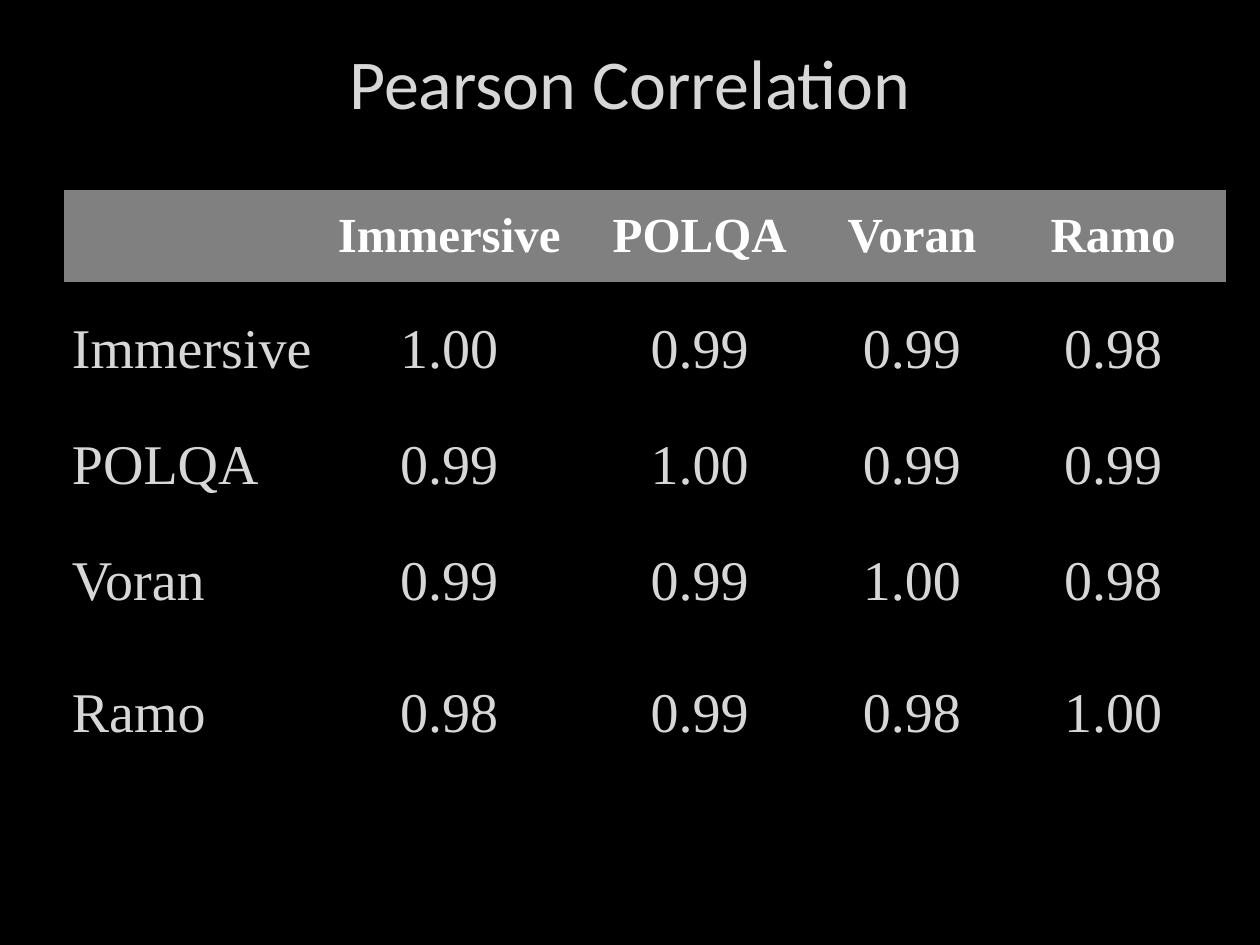
import pptx
import pptx.util
import pptx.dml.color
import pptx.enum.text
import lxml.etree

Cm = pptx.util.Cm
Pt = pptx.util.Pt
Rgb = pptx.dml.color.RGBColor.from_string
Align = pptx.enum.text.PP_ALIGN
Middle = pptx.enum.text.MSO_ANCHOR.MIDDLE

theme = {
    "back": "000000",
    "band": "808080",
    "rule": "000000",
    "title": {"name": "Calibri", "size": Pt(40), "bold": False, "color": "D7D7D7"},
    "head": {"name": "Times New Roman", "size": Pt(28), "bold": True, "color": "FFFFFF"},
    "body": {"name": "Times New Roman", "size": Pt(32), "bold": False, "color": "D7D7D7"},
    "thick": Pt(1.5),
    "thin": Pt(1),
}


def write(frame, text, style, align):
    para = frame.paragraphs[0]
    para.alignment = align
    run = para.add_run()
    run.text = text
    for key, value in style.items():
        if key == "color":
            run.font.color.rgb = Rgb(value)
        else:
            setattr(run.font, key, value)


def edge(cell, side, width):
    props = cell._tc.get_or_add_tcPr()
    space = "{" + props.nsmap["a"] + "}"
    line = lxml.etree.SubElement(props, space + "ln" + side, w=str(width))
    fill = lxml.etree.SubElement(line, space + "solidFill")
    lxml.etree.SubElement(fill, space + "srgbClr", val=theme["rule"])


deck = pptx.Presentation()
deck.slide_width = Cm(25.4)
deck.slide_height = Cm(19.05)
slide = deck.slides.add_slide(deck.slide_layouts[5])
slide.background.fill.solid()
slide.background.fill.fore_color.rgb = Rgb(theme["back"])

title = slide.shapes.title
place = {"left": Cm(1.27), "top": Cm(0.76), "width": Cm(22.86), "height": Cm(1.78)}
for key, value in place.items():
    setattr(title, key, value)
title.text_frame.vertical_anchor = Middle
write(title.text_frame, "Pearson Correlation", theme["title"], Align.CENTER)

names = ["Immersive", "POLQA", "Voran", "Ramo"]
scores = [
    ["1.00", "0.99", "0.99", "0.98"],
    ["0.99", "1.00", "0.99", "0.99"],
    ["0.99", "0.99", "1.00", "0.98"],
    ["0.98", "0.99", "0.98", "1.00"],
]
grid = [[""] + names] + [[name] + row for name, row in zip(names, scores)]
widths = [5.26, 5.05, 5.05, 3.51, 4.6]
heights = [1.9, 2.67, 2.01, 2.67, 2.67]
last = len(names)

frame = slide.shapes.add_table(
    len(heights), len(widths), Cm(1.27), Cm(3.81), Cm(sum(widths)), Cm(sum(heights))
)
table = frame.table
table.horz_banding = False
table._tbl.tblPr[0].text = "{2D5ABB26-0587-4C30-8999-92F81FD0307C}"
for col, width in zip(table.columns, widths):
    col.width = Cm(width)
for row, height in zip(table.rows, heights):
    row.height = Cm(height)

inset = {
    "margin_left": Cm(0.18),
    "margin_right": Cm(0.18),
    "margin_top": 0,
    "margin_bottom": 0,
    "vertical_anchor": Middle,
}
for r, line in enumerate(grid):
    for c, text in enumerate(line):
        cell = table.cell(r, c)
        for key, value in inset.items():
            setattr(cell, key, value)
        if c == 0:
            edge(cell, "L", theme["thick"])
        if c == last:
            edge(cell, "R", theme["thick"])
        edge(cell, "T", theme["thick"] if r < 2 else theme["thin"])
        edge(cell, "B", theme["thick"] if r in (0, last) else theme["thin"])
        if r == 0:
            cell.fill.solid()
            cell.fill.fore_color.rgb = Rgb(theme["band"])
        else:
            cell.fill.background()
        if text:
            style = theme["body"] if r else theme["head"]
            align = Align.CENTER if c else Align.JUSTIFY
            write(cell.text_frame, text, style, align)

deck.save("out.pptx")
